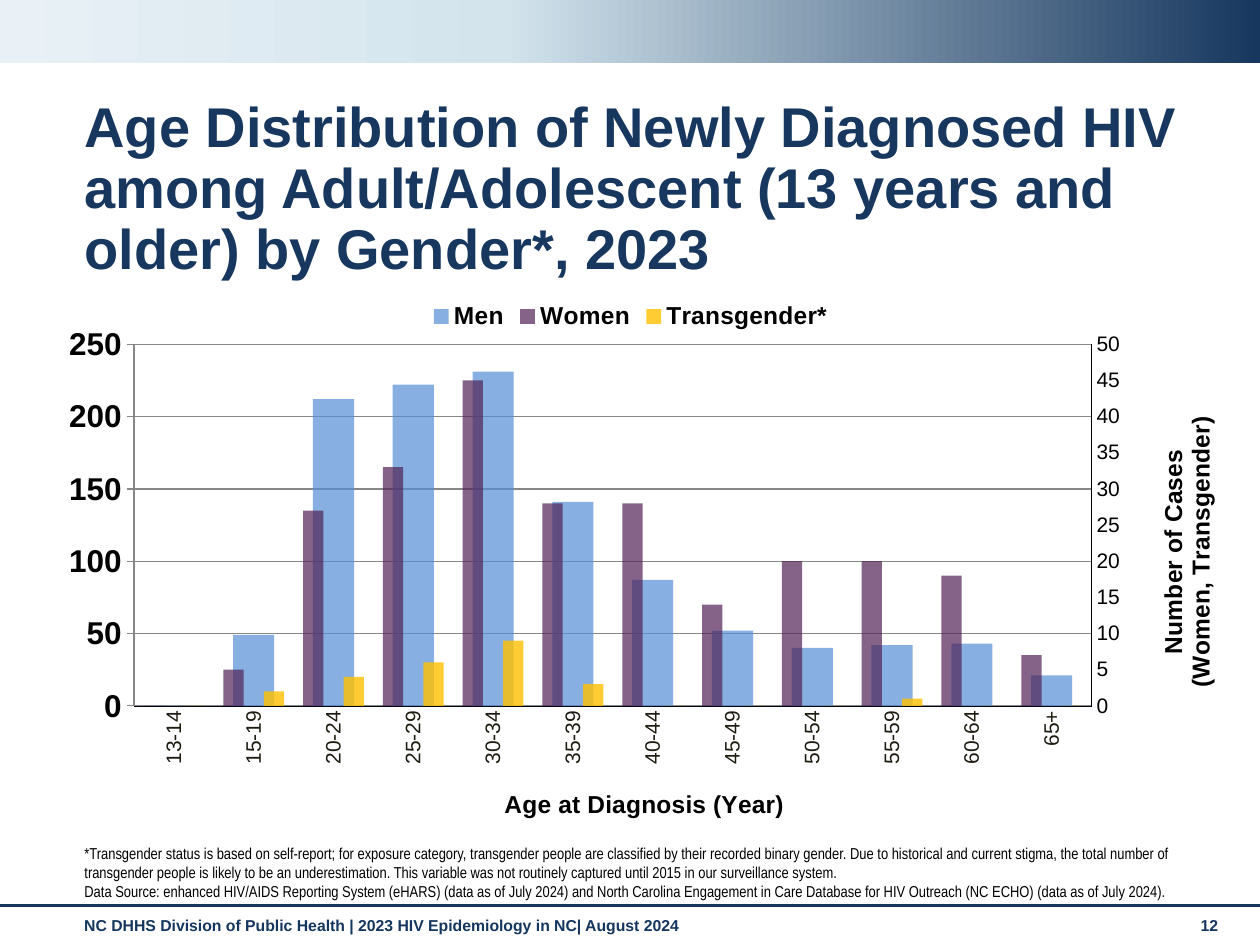
import copy

import lxml.etree
import pptx
import pptx.chart.axis
import pptx.chart.data
import pptx.dml.color
import pptx.enum.chart
import pptx.enum.shapes
import pptx.enum.text
import pptx.oxml.ns
import pptx.util

RGB = pptx.dml.color.RGBColor
NAVY = RGB(0x17, 0x37, 0x5E)
FOOTER_NAVY = RGB(0x15, 0x36, 0x5E)
MIST = RGB(0xD3, 0xE4, 0xED)
PALE = RGB(0xE9, 0xF1, 0xF6)
BLACK = RGB(0x00, 0x00, 0x00)
AXIS_INK = RGB(0x1E, 0x1C, 0x11)
AXIS_LINE = RGB(0x00, 0x05, 0x14)
MEN_BLUE = RGB(0x55, 0x8E, 0xD5)
WOMEN_PURPLE = RGB(0x52, 0x22, 0x58)
TRANS_GOLD = RGB(0xFF, 0xC0, 0x00)

AGES = ["13-14", "15-19", "20-24", "25-29", "30-34", "35-39",
        "40-44", "45-49", "50-54", "55-59", "60-64", "65+"]
# name, values, colour, opacity in percent
SERIES = [
    ("Men", [0, 49, 212, 222, 231, 141, 87, 52, 40, 42, 43, 21], MEN_BLUE, 70),
    ("Women", [0, 5, 27, 33, 45, 28, 28, 14, 20, 20, 18, 7], WOMEN_PURPLE, 70),
    ("Transgender*", [0, 2, 4, 6, 9, 3, 0, 0, 0, 1, 0, 0], TRANS_GOLD, 80),
]
NOTES = [
    "*Transgender status is based on self-report; for exposure category, transgender people are "
    "classified by their recorded binary gender. Due to historical and current stigma, the total "
    "number of transgender people is likely to be an underestimation. This variable was not "
    "routinely captured until 2015 in our surveillance system.",
    "Data Source: enhanced HIV/AIDS Reporting System (eHARS) (data as of July 2024) and North "
    "Carolina Engagement in Care Database for HIV Outreach (NC ECHO) (data as of July 2024).",
]
UPRIGHT = "-5400000"
qn = pptx.oxml.ns.qn


def inches(box):
    return [pptx.util.Inches(length) for length in box]


def style_font(font, size, color, bold=False, name="Arial"):
    font.size = pptx.util.Pt(size)
    font.name = name
    font.bold = bold
    font.color.rgb = color


def write_text(frame, text, size, color, bold=False, name="Arial", spacing=None,
               align=pptx.enum.text.PP_ALIGN.LEFT):
    """Fill a text frame, one paragraph a line, all in one format."""
    frame.text = text
    for para in frame.paragraphs:
        para.alignment = align
        para.space_before = pptx.util.Pt(0)
        if spacing:
            para.line_spacing = spacing
        for span in para.runs:
            style_font(span.font, size, color, bold, name)


def place_placeholder(shape, box, anchor):
    shape.left, shape.top, shape.width, shape.height = inches(box)
    shape.text_frame.word_wrap = True
    shape.text_frame.auto_size = pptx.enum.text.MSO_AUTO_SIZE.NONE
    shape.text_frame.vertical_anchor = anchor


def add_band(slide, box):
    band = slide.shapes.add_shape(pptx.enum.shapes.MSO_SHAPE.RECTANGLE, *inches(box))
    band.shadow.inherit = False
    band.line.fill.background()
    band.fill.gradient()
    band.fill.gradient_angle = 180
    first = band.fill.gradient_stops[0]._gs
    first.addnext(copy.deepcopy(first))
    stops = [(0, NAVY), (0.6, MIST), (1, PALE)]
    for stop, (position, color) in zip(band.fill.gradient_stops, stops):
        stop.position = position
        stop.color.rgb = color


def add_footer(slide, box):
    left, top, width, height = box
    rule = slide.shapes.add_connector(
        pptx.enum.shapes.MSO_CONNECTOR.STRAIGHT, *inches((left, top, left + width, top)))
    rule.line.color.rgb = NAVY
    rule.line.width = pptx.util.Pt(1.75)
    lxml.etree.SubElement(rule._element.spPr, qn("a:effectLst"))
    labels = [
        (0.57, 8.74, "NC DHHS Division of Public Health | 2023 HIV Epidemiology in NC| August 2024"),
        (9.43, 0.44, "12"),
    ]
    for offset, span_width, text in labels:
        label = slide.shapes.add_textbox(
            *inches((left + offset, top + 0.03, span_width, height - 0.03)))
        label.text_frame.word_wrap = True
        write_text(label.text_frame, text, 9, FOOTER_NAVY, bold=True)


def set_layout(parent, index, target=None, **shares):
    """Fix a chart part at shares of the chart's size."""
    layout = parent.find(qn("c:layout"))
    if layout is not None:
        parent.remove(layout)
    layout = parent.makeelement(qn("c:layout"))
    parent.insert(index, layout)
    manual = lxml.etree.SubElement(layout, qn("c:manualLayout"))
    settings = {"layoutTarget": target} if target else {}
    settings.update(xMode="edge", yMode="edge", **shares)
    for tag, value in settings.items():
        lxml.etree.SubElement(manual, qn("c:" + tag)).set("val", str(value))


def style_axis(axis, title, x, y, ink=AXIS_INK, line=AXIS_LINE, line_width=0.33, upright=True):
    axis.has_major_gridlines = False
    axis.major_tick_mark = axis.minor_tick_mark = pptx.enum.chart.XL_TICK_MARK.NONE
    style_font(axis.tick_labels.font, 12, ink)
    axis.format.line.color.rgb = line
    axis.format.line.width = pptx.util.Pt(line_width)
    frame = axis.axis_title.text_frame
    write_text(frame, title, 14, BLACK, bold=True, align=pptx.enum.text.PP_ALIGN.CENTER)
    if upright:
        frame._txBody.bodyPr.set("rot", UPRIGHT)
        frame._txBody.bodyPr.set("vert", "horz")
    set_layout(axis.axis_title._element, 1, x=x, y=y)


def scale_axis(axis, top, step):
    axis.minimum_scale, axis.maximum_scale, axis.major_unit = 0, top, step


def add_right_axis(plot_area):
    """Move every series but the first to a second pair of axes; return its value axis."""
    bars = plot_area.find(qn("c:barChart"))
    right_bars = copy.deepcopy(bars)
    bars.addnext(right_bars)
    for series in bars.findall(qn("c:ser"))[1:]:
        bars.remove(series)
    right_bars.remove(right_bars.find(qn("c:ser")))

    category = plot_area.find(qn("c:catAx"))
    value = plot_area.find(qn("c:valAx"))
    right_category, right_value = copy.deepcopy(category), copy.deepcopy(value)
    value.addnext(right_value)
    right_value.addnext(right_category)
    ids = ["50010", "50020"]
    for reference, number in zip(right_bars.findall(qn("c:axId")), ids):
        reference.set("val", number)
    for axis, own, other in [(right_category, *ids), (right_value, *ids[::-1])]:
        axis.find(qn("c:axId")).set("val", own)
        axis.find(qn("c:crossAx")).set("val", other)
    right_category.find(qn("c:delete")).set("val", "1")
    right_value.find(qn("c:axPos")).set("val", "r")
    right_value.find(qn("c:crosses")).set("val", "max")
    return pptx.chart.axis.ValueAxis(right_value)


def add_case_chart(slide, box):
    data = pptx.chart.data.CategoryChartData()
    data.categories = AGES
    for name, values, _, _ in SERIES:
        data.add_series(name, values)
    chart = slide.shapes.add_chart(
        pptx.enum.chart.XL_CHART_TYPE.COLUMN_CLUSTERED, *inches(box), data).chart
    chart.has_title = False
    style_font(chart.font, 18, BLACK, bold=True)
    chart.has_legend = True
    chart.legend.position = pptx.enum.chart.XL_LEGEND_POSITION.TOP
    chart.legend.include_in_layout = False
    style_font(chart.legend.font, 14, BLACK, bold=True)

    # Columns
    plot = chart.plots[0]
    plot.vary_by_categories = False
    plot.gap_width, plot.overlap = 94, -100
    for series, (_, _, color, opacity) in zip(plot.series, SERIES):
        series.format.fill.solid()
        series.format.fill.fore_color.rgb = color
        tint = next(series.format.fill._xPr.iter(qn("a:srgbClr")))
        lxml.etree.SubElement(tint, qn("a:alpha")).set("val", str(opacity * 1000))

    # Axes
    plot_area = chart._chartSpace.chart.plotArea
    right_axis = add_right_axis(plot_area)
    style_axis(chart.category_axis, "Age at Diagnosis (Year)", 0.39, 0.88, upright=False)
    labels = chart.category_axis._element.find(qn("c:txPr")).find(qn("a:bodyPr"))
    labels.set("rot", UPRIGHT)
    labels.set("vert", "horz")
    style_axis(chart.value_axis, "Number of Cases (Men)", 0.01, 0.21)
    scale_axis(chart.value_axis, 300, 50)
    style_axis(right_axis, "Number of Cases\n(Women, Transgender)", 0.94, 0.22,
               ink=BLACK, line=BLACK, line_width=0.75)
    scale_axis(right_axis, 50, 5)
    set_layout(plot_area, 0, target="inner", x=0.082, y=0.099, w=0.806, h=0.642)


def build_chart_slide(deck):
    slide = deck.slides.add_slide(deck.slide_layouts[1])
    title, body = slide.placeholders
    add_band(slide, (0, 0, 10, 0.5))
    add_footer(slide, (0, 7.19, 10, 0.31))
    place_placeholder(title, (0.57, 0.74, 9.43, 0.6), pptx.enum.text.MSO_ANCHOR.TOP)
    write_text(title.text_frame,
               "Age Distribution of Newly Diagnosed HIV among Adult/Adolescent "
               "(13 years and older) by Gender*, 2023", 32, NAVY, bold=True, spacing=0.9)
    add_case_chart(slide, (0.29, 2.29, 9.43, 4.47))
    # Notes under the chart
    place_placeholder(body, (0.57, 6.99, 9.29, 0.21), pptx.enum.text.MSO_ANCHOR.BOTTOM)
    write_text(body.text_frame, "\n".join(NOTES), 9, BLACK, name="Arial Narrow")
    for para in body.text_frame.paragraphs:
        properties = para._p.get_or_add_pPr()
        properties.set("marL", "0")
        properties.set("indent", "0")
        lxml.etree.SubElement(properties, qn("a:buNone"))


def main():
    deck = pptx.Presentation()
    deck.slide_width, deck.slide_height = inches((10, 7.5))
    build_chart_slide(deck)
    deck.save("out.pptx")


if __name__ == "__main__":
    main()
